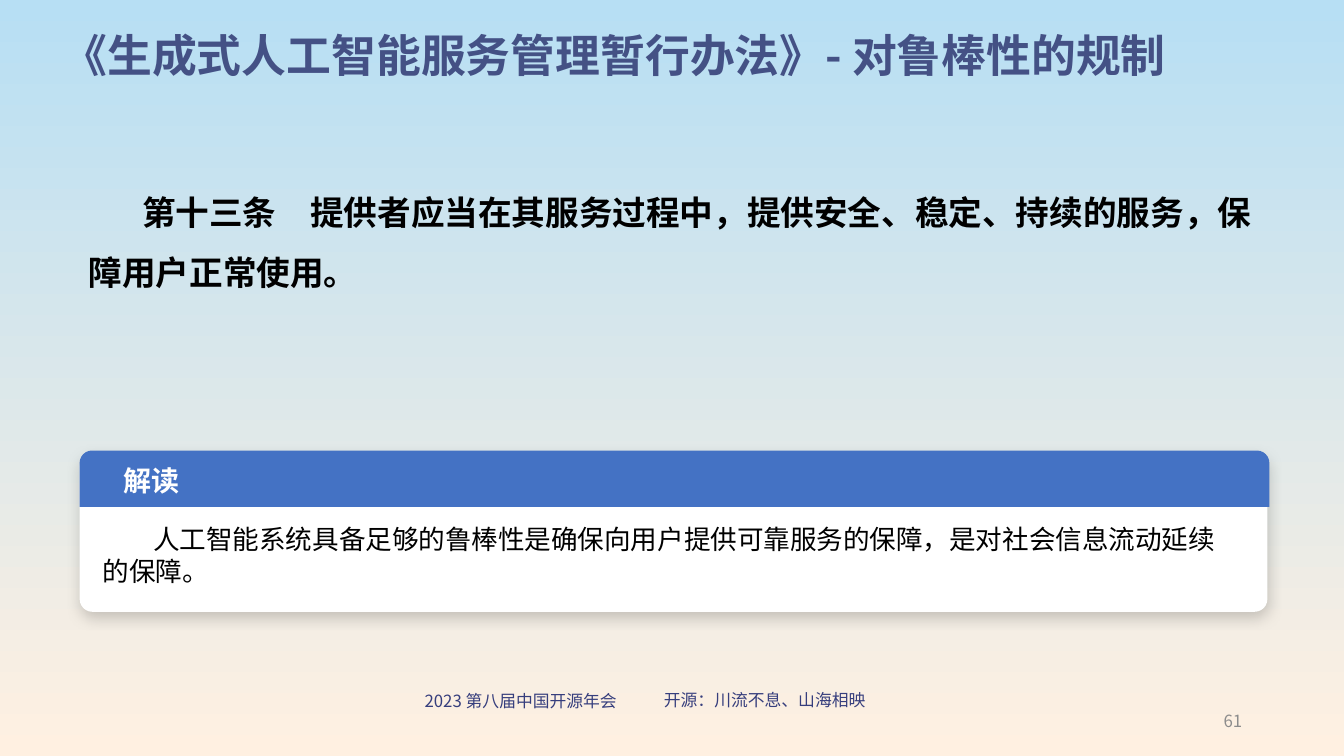
from dataclasses import dataclass, field

from lxml.etree import SubElement
from pptx import Presentation
from pptx.dml.color import RGBColor
from pptx.enum.shapes import MSO_SHAPE as Shape
from pptx.enum.text import MSO_ANCHOR as Anchor, MSO_AUTO_SIZE as AutoSize, PP_ALIGN as Align
from pptx.oxml.ns import qn
from pptx.util import Inches, Pt

FONT = "Noto Sans CJK SC"
SKY = RGBColor(0xB7, 0xDF, 0xF4)
SAND = RGBColor(0xFF, 0xF0, 0xE1)
NAVY = RGBColor(0x36, 0x3E, 0x7D)
TITLE_BLUE = RGBColor(0x44, 0x51, 0x85)
HEADER_BLUE = RGBColor(0x44, 0x72, 0xC4)
GRAY = RGBColor(0x8C, 0x8C, 0x8C)
BLACK = RGBColor(0, 0, 0)
WHITE = RGBColor(0xFF, 0xFF, 0xFF)

PLAIN_INSETS = (0.1, 0.05, 0.1, 0.05)
NO_INSETS = (0, 0, 0, 0)


@dataclass
class Label:
    text: str
    size: float
    color: RGBColor
    box: tuple = ()
    bold: bool = False
    insets: tuple = PLAIN_INSETS
    anchor: Anchor = Anchor.TOP
    indent: float = 0
    paragraph: dict = field(default_factory=dict)


TITLE = Label("《生成式人工智能服务管理暂行办法》- 对鲁棒性的规制", 32, TITLE_BLUE,
              (0.52, 0.33, 12.07, 0.5), True, anchor=Anchor.MIDDLE,
              paragraph={"alignment": Align.LEFT, "line_spacing": 0.9})
PAGE_LABELS = [
    Label("2023 第八届中国开源年会", 12, NAVY, (3.79, 6.8, 2.75, 0.3),
          paragraph={"alignment": Align.CENTER}),
    Label("开源：川流不息、山海相映", 12, NAVY, (6.38, 6.79, 2.41, 0.3),
          paragraph={"alignment": Align.CENTER}),
    Label("61", 12, GRAY, (9.42, 6.95, 3, 0.4), anchor=Anchor.MIDDLE,
          paragraph={"alignment": Align.RIGHT}),
    Label("第十三条\u3000提供者应当在其服务过程中，提供安全、稳定、持续的服务，保障用户正常使用。",
          24, BLACK, (0.88, 1.7, 11.69, 1.15), True, NO_INSETS, indent=0.53,
          paragraph={"line_spacing": 1.5}),
]
CARD_HEADER = Label("解读", 20, WHITE, bold=True, insets=(0.4, 0.04, 0.08, 0.04),
                    anchor=Anchor.MIDDLE, paragraph={"alignment": Align.LEFT})
CARD_BODY = Label("人工智能系统具备足够的鲁棒性是确保向用户提供可靠服务的保障，是对社会信息流动延续的保障。",
                  19, BLACK, (1.02, 5.19, 11.11, 0.64), insets=NO_INSETS, indent=0.5,
                  paragraph={"space_after": Pt(6)})


def set_all(target, values: dict) -> None:
    for name, value in values.items():
        setattr(target, name, value)


def write(sp, label: Label) -> None:
    tf = sp.text_frame
    left, top, right, bottom = map(Inches, label.insets)
    set_all(tf, {"word_wrap": True, "auto_size": AutoSize.NONE,
                 "vertical_anchor": label.anchor, "margin_left": left,
                 "margin_top": top, "margin_right": right, "margin_bottom": bottom})
    p = tf.paragraphs[0]
    set_all(p, label.paragraph)
    if label.indent:
        p._p.get_or_add_pPr().set("indent", str(Inches(label.indent)))
    r = p.add_run()
    r.text = label.text
    set_all(r.font, {"name": FONT, "size": Pt(label.size), "bold": label.bold})
    r.font.color.rgb = label.color
    SubElement(r._r.rPr, qn("a:ea"), typeface=FONT)


def add_label(shapes, label: Label) -> None:
    write(shapes.add_textbox(*map(Inches, label.box)), label)


def add_panel(shapes, kind: Shape, box: tuple, adjustments: tuple, color: RGBColor):
    sp = shapes.add_shape(kind, *map(Inches, box))
    for i, value in enumerate(adjustments):
        sp.adjustments[i] = value
    sp.fill.solid()
    sp.fill.fore_color.rgb = color
    sp.line.fill.background()
    sp.shadow.inherit = False
    return sp


def add_soft_shadow(sp) -> None:
    effects = sp._element.spPr.find(qn("a:effectLst"))
    shadow = SubElement(effects, qn("a:outerShdw"), blurRad=str(Pt(10)), dist=str(Pt(3)),
                        dir="5400000", algn="t", rotWithShape="0")
    color = SubElement(shadow, qn("a:srgbClr"), val=str(BLACK))
    SubElement(color, qn("a:alpha"), val="18000")


def add_card(s) -> None:
    shapes = s.shapes.add_group_shape().shapes
    add_soft_shadow(add_panel(shapes, Shape.ROUNDED_RECTANGLE,
                              (0.79, 4.5, 11.78, 1.57), (0.08,), WHITE))
    header = add_panel(shapes, Shape.ROUND_2_SAME_RECTANGLE,
                       (0.79, 4.47, 11.8, 0.56), (0.22, 0), HEADER_BLUE)
    write(header, CARD_HEADER)
    add_label(shapes, CARD_BODY)


def paint_background(s) -> None:
    fill = s.background.fill
    fill.gradient()
    fill.gradient_angle = 270
    for stop, color, position in zip(fill.gradient_stops, (SKY, SAND), (0, 1)):
        stop.color.rgb = color
        stop.position = position


def main() -> None:
    prs = Presentation()
    prs.slide_width, prs.slide_height = Inches(13.33), Inches(7.5)
    s = prs.slides.add_slide(prs.slide_layouts[5])
    paint_background(s)
    title = s.shapes.title
    set_all(title, dict(zip(("left", "top", "width", "height"), map(Inches, TITLE.box))))
    write(title, TITLE)
    for label in PAGE_LABELS:
        add_label(s.shapes, label)
    add_card(s)
    prs.save("out.pptx")


if __name__ == "__main__":
    main()
